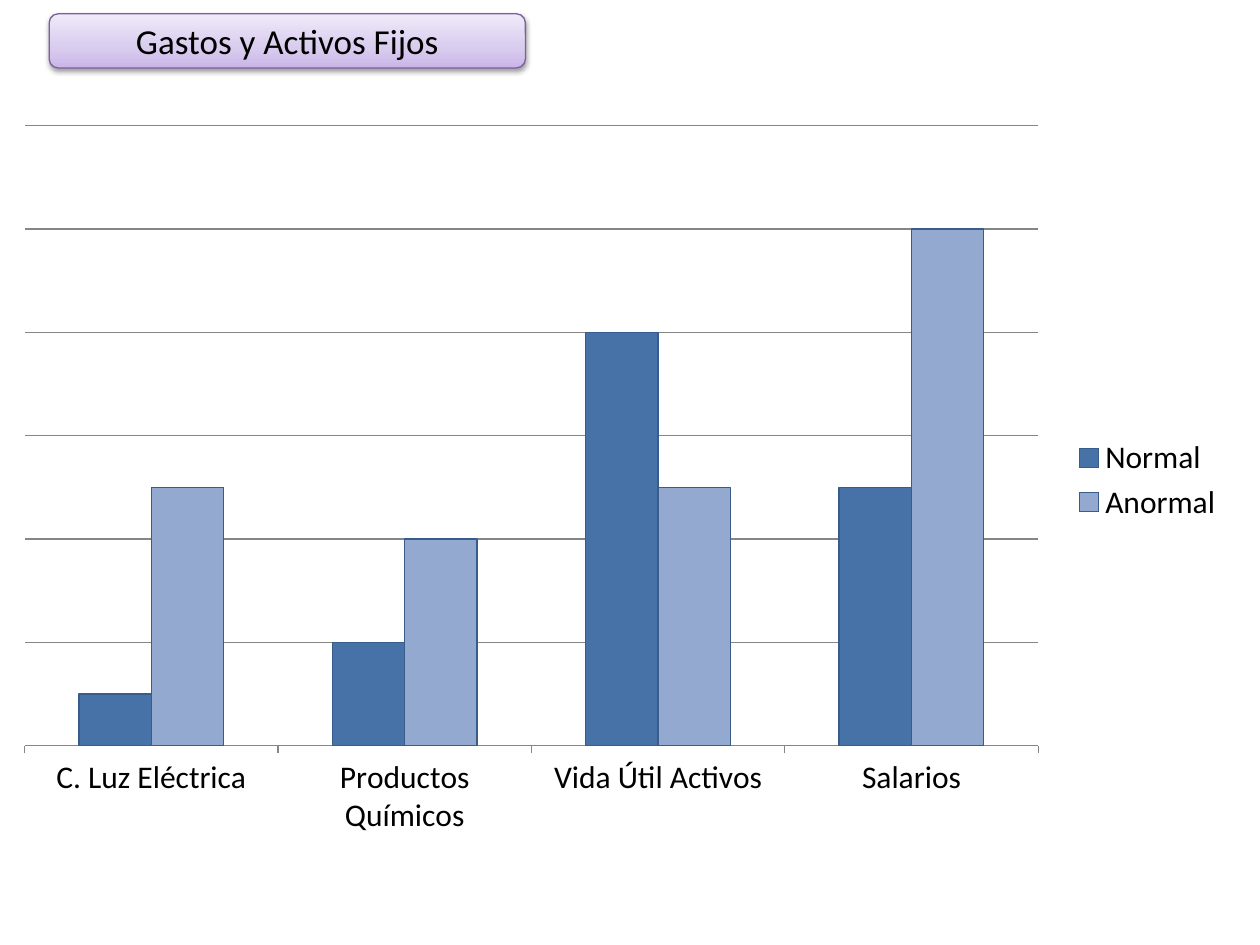
from dataclasses import dataclass

from pptx import Presentation
from pptx.chart.data import CategoryChartData
from pptx.dml.color import RGBColor
from pptx.enum.chart import XL_CHART_TYPE as ChartType
from pptx.enum.chart import XL_LEGEND_POSITION as LegendPosition
from pptx.enum.chart import XL_TICK_MARK as TickMark
from pptx.enum.shapes import MSO_SHAPE as Shape
from pptx.enum.text import MSO_ANCHOR as Anchor
from pptx.enum.text import PP_ALIGN as Align
from pptx.oxml import parse_xml
from pptx.oxml.ns import nsdecls, qn
from pptx.util import Inches, Pt

FONT = "Calibri"
BLACK = RGBColor(0x00, 0x00, 0x00)
GRID_GREY = RGBColor(0x86, 0x86, 0x86)
BAR_EDGE = RGBColor(0x38, 0x5D, 0x8A)
DARK_BLUE = RGBColor(0x46, 0x72, 0xA8)
LIGHT_BLUE = RGBColor(0x93, 0xA9, 0xCF)
PURPLE = RGBColor(0x7D, 0x60, 0xA0)
LILAC_STOPS = (
    (0, RGBColor(0xC9, 0xB5, 0xE8)),
    (35, RGBColor(0xD8, 0xCB, 0xEE)),
    (100, RGBColor(0xF0, 0xEA, 0xF9)),
)


@dataclass(frozen=True)
class Condition:
    name: str
    values: tuple[int, ...]
    color: RGBColor


CATEGORIES = ("C. Luz Eléctrica", "Productos Químicos", "Vida Útil Activos", "Salarios")
CONDITIONS = (
    Condition("Normal", (10, 20, 80, 50), DARK_BLUE),
    Condition("Anormal", (50, 40, 50, 100), LIGHT_BLUE),
)


def style_font(font, size: int) -> None:
    font.name = FONT
    font.size = Pt(size)
    font.color.rgb = BLACK


def style_line(line, color: RGBColor) -> None:
    line.color.rgb = color
    line.width = Pt(0.75)


def add_title(slide) -> None:
    title = slide.shapes.add_shape(
        Shape.ROUNDED_RECTANGLE, Inches(0.39), Inches(0.11), Inches(3.78), Inches(0.43)
    )
    style_line(title.line, PURPLE)

    # Upward gradient with three stops
    stops = "".join(
        f'<a:gs pos="{position * 1000}"><a:srgbClr val="{color}"/></a:gs>'
        for position, color in LILAC_STOPS
    )
    properties = title._element.spPr
    properties.find(qn("a:prstGeom")).addnext(parse_xml(
        f'<a:gradFill {nsdecls("a")} rotWithShape="1"><a:gsLst>{stops}</a:gsLst>'
        '<a:lin ang="16200000" scaled="1"/></a:gradFill>'
    ))

    # Soft shadow below
    title.shadow.inherit = False
    properties.find(qn("a:effectLst")).append(parse_xml(
        f'<a:outerShdw {nsdecls("a")} blurRad="{Pt(3.1)}" dist="{Pt(1.6)}" '
        'dir="5400000" rotWithShape="0"><a:srgbClr val="000000">'
        '<a:alpha val="38000"/></a:srgbClr></a:outerShdw>'
    ))

    frame = title.text_frame
    frame.text = "Gastos y Activos Fijos"
    frame.vertical_anchor = Anchor.MIDDLE
    frame.paragraphs[0].alignment = Align.CENTER
    style_font(frame.paragraphs[0].runs[0].font, 20)


def place_plot(chart, x: float, y: float, width: float, height: float) -> None:
    """Fix the inner plot area, in fractions of the chart."""
    plot_area = chart._chartSpace.chart.plotArea
    for layout in plot_area.findall(qn("c:layout")):
        plot_area.remove(layout)
    plot_area.insert(0, parse_xml(
        f'<c:layout {nsdecls("c")}><c:manualLayout><c:layoutTarget val="inner"/>'
        '<c:xMode val="edge"/><c:yMode val="edge"/>'
        f'<c:x val="{x}"/><c:y val="{y}"/><c:w val="{width}"/><c:h val="{height}"/>'
        '</c:manualLayout></c:layout>'
    ))


def add_expense_chart(slide) -> None:
    data = CategoryChartData()
    data.categories = CATEGORIES
    for condition in CONDITIONS:
        data.add_series(condition.name, condition.values)
    chart = slide.shapes.add_chart(
        ChartType.COLUMN_CLUSTERED,
        Inches(0), Inches(0.88), Inches(9.81), Inches(5.86), data,
    ).chart
    style_font(chart.font, 18)
    chart.has_title = False
    place_plot(chart, 0.02, 0.02, 0.82, 0.84)

    # Bars
    plot = chart.plots[0]
    plot.gap_width = 150
    plot.overlap = 0
    plot.vary_by_categories = False
    for series, condition in zip(plot.series, CONDITIONS):
        series.format.fill.solid()
        series.format.fill.fore_color.rgb = condition.color
        style_line(series.format.line, BAR_EDGE)

    # Axes
    chart.category_axis.major_tick_mark = TickMark.OUTSIDE
    style_line(chart.category_axis.format.line, GRID_GREY)
    scale = chart.value_axis
    scale.minimum_scale, scale.maximum_scale, scale.major_unit = 0, 120, 20
    scale.has_major_gridlines = True
    style_line(scale.major_gridlines.format.line, GRID_GREY)
    scale.visible = False

    # Legend
    chart.has_legend = True
    chart.legend.position = LegendPosition.RIGHT
    chart.legend.include_in_layout = False


def main() -> None:
    presentation = Presentation()
    presentation.slide_width = Inches(10)
    presentation.slide_height = Inches(7.5)
    slide = presentation.slides.add_slide(presentation.slide_layouts[6])
    add_title(slide)
    add_expense_chart(slide)
    presentation.save("out.pptx")


if __name__ == "__main__":
    main()
